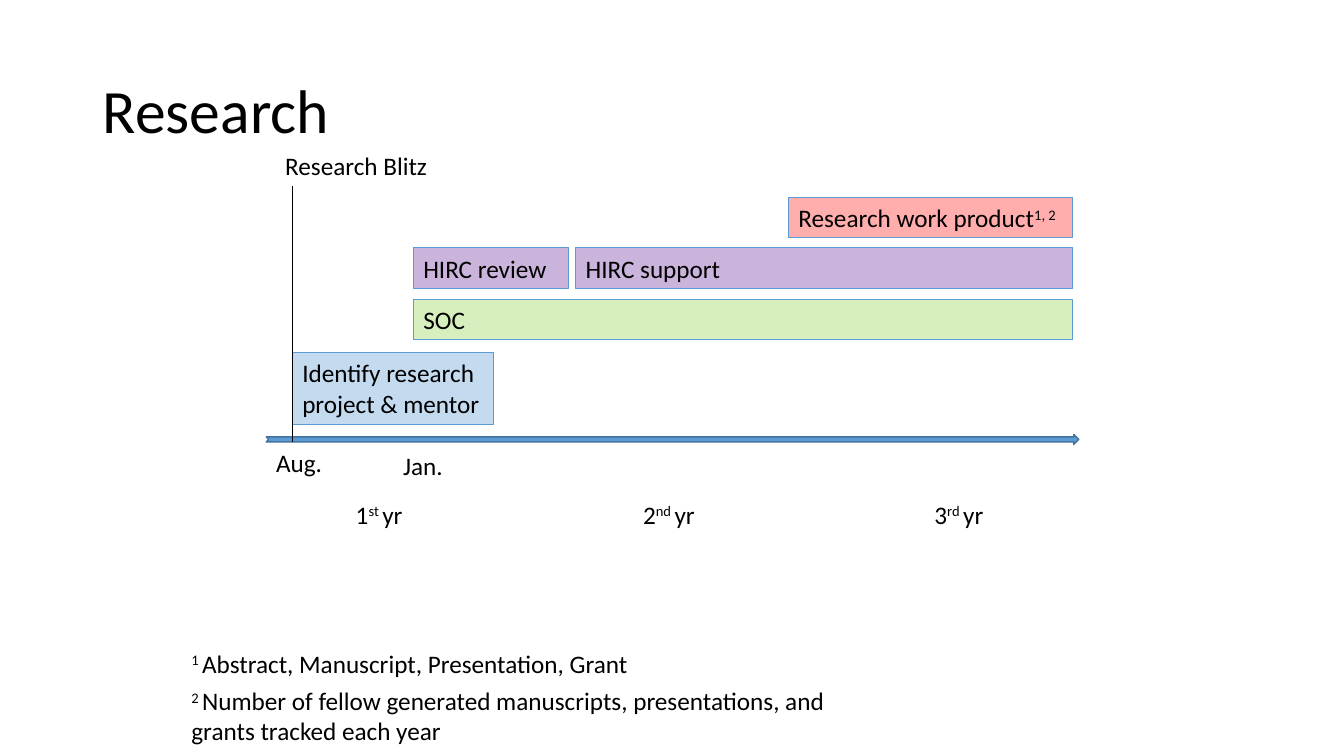
from lxml.etree import SubElement
from pptx import Presentation
from pptx.dml.color import RGBColor
from pptx.enum.shapes import MSO_CONNECTOR, MSO_SHAPE
from pptx.enum.text import MSO_ANCHOR, MSO_AUTO_SIZE
from pptx.oxml.ns import qn
from pptx.util import Inches, Pt

BLACK = RGBColor(0x00, 0x00, 0x00)
BLUE = RGBColor(0x5B, 0x9B, 0xD5)
DARK_BLUE = RGBColor(0x43, 0x73, 0x9E)
GREEN = RGBColor(0x92, 0xD0, 0x50)
PURPLE = RGBColor(0x70, 0x30, 0xA0)
RED = RGBColor(0xFF, 0x00, 0x00)

BODY = {"name": "Calibri", "size": Pt(18)}
HEADING = {"name": "Calibri", "size": Pt(44)}

START = 2.9
SOC_START = 4.1
END = 10.64
ROW = 0.4
TWO_ROWS = 0.71

BARS = [
    ("Identify research project & mentor", START, 3.5, 4.9, TWO_ROWS, BLUE, 36),
    ("SOC", SOC_START, 2.97, END, ROW, GREEN, 36),
    ("Research work product^1, 2", 7.82, 1.96, END, ROW, RED, 32),
    ("HIRC review", SOC_START, 2.46, 5.64, ROW, PURPLE, 36),
    ("HIRC support", 5.71, 2.46, END, ROW, PURPLE, 36),
]
LABELS = [
    ("Research Blitz", 2.73, 1.44, 1.62, ROW),
    ("Aug.", 2.64, 4.39, 0.66, ROW),
    ("Jan.", 3.9, 4.42, 0.6, ROW),
    ("1^st ^yr", 3.43, 4.9, 0.71, ROW),
    ("2^nd ^yr", 6.28, 4.9, 0.76, ROW),
    ("3^rd ^yr", 9.17, 4.9, 0.73, ROW),
    ("^1 ^Abstract, Manuscript, Presentation, Grant", 1.8, 6.38, 4.59, ROW),
    ("^2 ^Number of fellow generated manuscripts, presentations, and\n"
     "grants tracked each year", 1.8, 6.75, 6.59, TWO_ROWS),
]


def format_font(font, values):
    for name, value in values.items():
        setattr(font, name, value)
    font.color.rgb = BLACK


def write_text(p, text, values):
    for i, part in enumerate(text.split("^")):
        if part:
            r = p.add_run()
            r.text = part
            format_font(r.font, values)
            if i % 2:
                r._r.get_or_add_rPr().set("baseline", "30000")


def add_title(slide, text):
    sp = slide.shapes.title
    sp.left, sp.top = Inches(0.92), Inches(0.4)
    sp.width, sp.height = Inches(11.5), Inches(1.45)
    tf = sp.text_frame
    tf.vertical_anchor = MSO_ANCHOR.MIDDLE
    p = tf.paragraphs[0]
    p.alignment = 1
    p.line_spacing = 0.9
    write_text(p, text, HEADING)


def add_label(slide, text, left, top, width, height, wrap=False):
    sp = slide.shapes.add_textbox(Inches(left), Inches(top), Inches(width), Inches(height))
    tf = sp.text_frame
    tf.word_wrap = wrap
    tf.auto_size = MSO_AUTO_SIZE.SHAPE_TO_FIT_TEXT
    for i, line in enumerate(text.split("\n")):
        p = tf.add_paragraph() if i else tf.paragraphs[0]
        write_text(p, line, BODY)
    return sp


def add_bar(slide, text, left, top, right, height, color, opacity):
    sp = add_label(slide, text, left, top, right - left, height, wrap="^" not in text)
    sp.fill.solid()
    sp.fill.fore_color.rgb = color
    clr = sp.fill._xPr.find(qn("a:solidFill"))[0]
    SubElement(clr, qn("a:alpha")).set("val", str(opacity * 1000))
    sp.line.color.rgb = BLUE
    sp.line.width = Pt(0.75)


def add_time_arrow(slide):
    sp = slide.shapes.add_shape(MSO_SHAPE.NOTCHED_RIGHT_ARROW, Inches(2.64), Inches(4.31),
                                Inches(8.06), Inches(0.1))
    sp.shadow.inherit = False
    sp.fill.solid()
    sp.fill.fore_color.rgb = BLUE
    sp.line.color.rgb = DARK_BLUE
    sp.line.width = Pt(1)


def add_start_line(slide):
    line = slide.shapes.add_connector(MSO_CONNECTOR.STRAIGHT, Inches(START), Inches(1.85),
                                      Inches(START), Inches(4.39))
    line.line.color.rgb = BLACK
    line.line.width = Pt(1)
    SubElement(line._element.spPr, qn("a:effectLst"))


def main():
    prs = Presentation()
    prs.slide_width, prs.slide_height = Inches(13.33), Inches(7.5)
    slide = prs.slides.add_slide(prs.slide_layouts[5])
    add_title(slide, "Research")
    add_time_arrow(slide)
    for bar in BARS:
        add_bar(slide, *bar)
    add_start_line(slide)
    for label in LABELS:
        add_label(slide, *label)
    prs.save("out.pptx")


if __name__ == "__main__":
    main()
